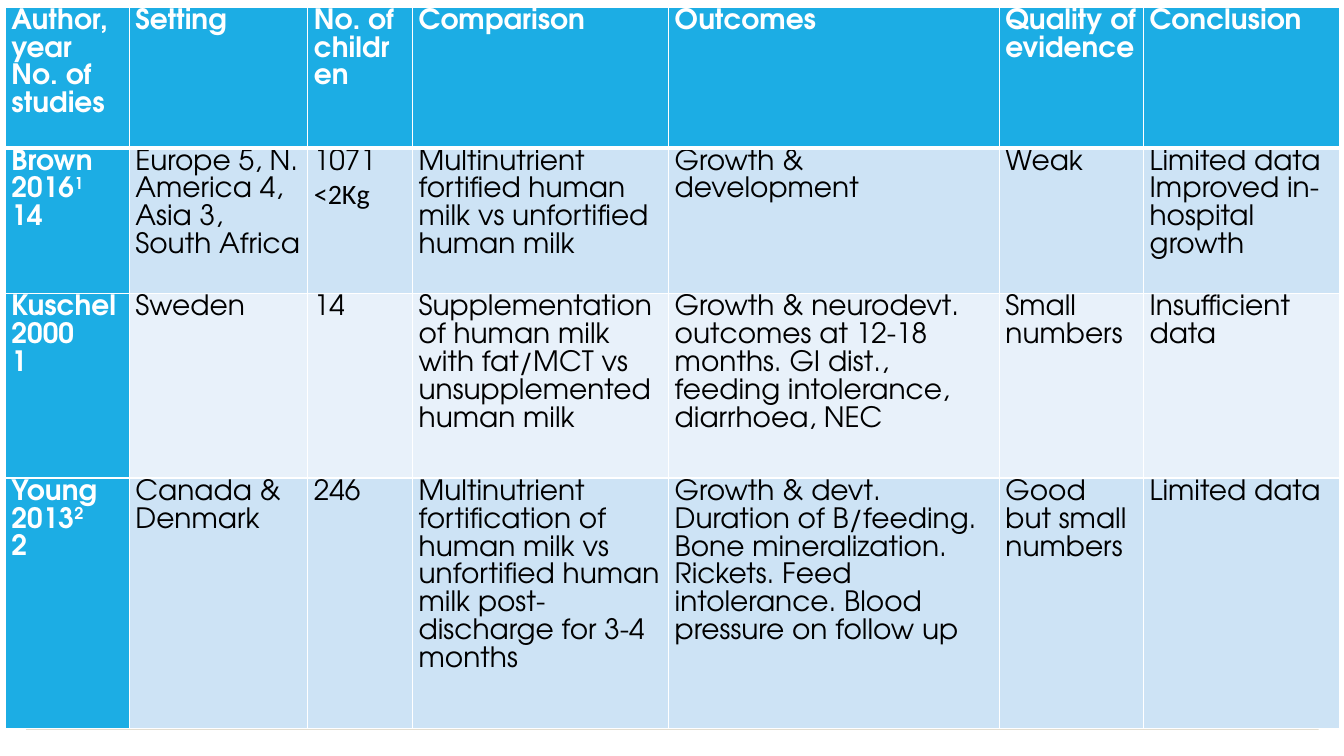
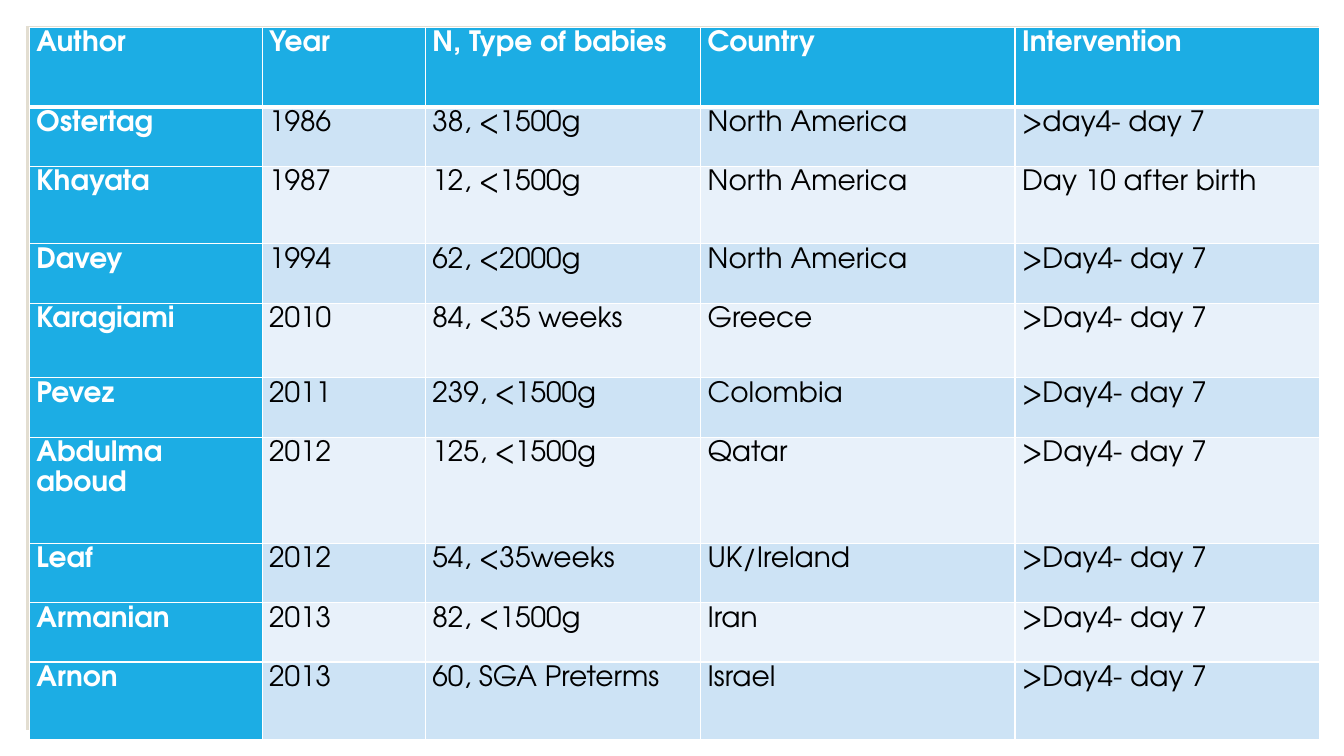
import pptx
import pptx.dml.color
import pptx.enum.shapes
import pptx.oxml
import pptx.oxml.ns
import pptx.util

RGB = pptx.dml.color.RGBColor
BLUE = RGB(0x1C, 0xAD, 0xE4)
BANDS = (RGB(0xCD, 0xE3, 0xF5), RGB(0xE8, 0xF1, 0xFA))
SAND = RGB(0xE3, 0xDE, 0xD1)
WHITE = RGB(0xFF, 0xFF, 0xFF)
BLACK = RGB(0, 0, 0)
FACE = "TeX Gyre Adventor"
SIZE = pptx.util.Pt(20)


class Deck:
    def __init__(self):
        self.show = pptx.Presentation()
        self.show.slide_width = pptx.util.Inches(13.33)
        self.show.slide_height = pptx.util.Inches(7.5)
        self.slide = None

    def box(self, left, top, width, height):
        wide, high = self.show.slide_width, self.show.slide_height
        return [int(share * side / 100) for share, side in
                zip((left, top, width, height), (wide, high, wide, high))]

    def page(self):
        self.slide = self.show.slides.add_slide(self.show.slide_layouts[6])
        panel = self.slide.shapes.add_shape(
            pptx.enum.shapes.MSO_SHAPE.RECTANGLE, *self.box(1.95, 3.47, 96.17, 93.07))
        panel.shadow.inherit = False
        panel.fill.solid()
        panel.fill.fore_color.rgb = SAND
        panel.line.fill.background()

    def edge(self, cell, side, width):
        line = pptx.oxml.parse_xml(
            f'<a:ln{side} {pptx.oxml.ns.nsdecls("a")} w="{pptx.util.Pt(width)}">'
            f'<a:solidFill><a:srgbClr val="{WHITE}"/></a:solidFill></a:ln{side}>')
        cell._tc.get_or_add_tcPr().append(line)

    def label(self, cell, text, head, space):
        frame = cell.text_frame
        frame.text = text
        for para in frame.paragraphs:
            para.line_spacing = space
            font = para.font
            font.name, font.size, font.bold = FACE, SIZE, head
            font.color.rgb = WHITE if head else BLACK
            base, mark, note = para.text.partition("^")
            if mark:
                para.runs[0].text = base
                run = para.add_run()
                run.text = note
                run.font._element.set("baseline", "30000")

    def table(self, area, cols, rows, data, pad, space):
        left, top, width, height = self.box(*area)
        grid = self.slide.shapes.add_table(
            len(rows), len(cols), left, top, width, height).table
        for col, part in zip(grid.columns, cols):
            col.width = int(width * part / sum(cols))
        for row, part in zip(grid.rows, rows):
            row.height = int(height * part / sum(rows))
        for i, line in enumerate(data):
            for j, text in enumerate(line):
                cell = grid.cell(i, j)
                head = i == 0 or j == 0
                cell.margin_left = cell.margin_right = pptx.util.Inches(pad)
                cell.margin_top = cell.margin_bottom = 0
                self.label(cell, text, head, space)
                for side, thick in (("L", 1), ("R", 1),
                                    ("T", 3 if i == 1 else 1),
                                    ("B", 3 if i == 0 else 1)):
                    self.edge(cell, side, thick)
                cell.fill.solid()
                cell.fill.fore_color.rgb = BLUE if head else BANDS[(i - 1) % 2]
        return grid


REVIEWS = [
    ("Author, year\nNo. of studies", "Setting", "No. of children", "Comparison",
     "Outcomes", "Quality of evidence", "Conclusion"),
    ("Brown 2016^1\n14", "Europe 5, N. America 4, Asia 3, South Africa",
     "1071\n<2Kg",
     "Multinutrient fortified human milk vs unfortified human milk",
     "Growth & development", "Weak",
     "Limited data Improved in-hospital growth"),
    ("Kuschel 2000\n1", "Sweden", "14",
     "Supplementation of human milk with fat/MCT vs unsupplemented human milk",
     "Growth & neurodevt. outcomes at 12-18 months. GI dist., "
     "feeding intolerance, diarrhoea, NEC",
     "Small numbers", "Insufficient data"),
    ("Young 2013^2\n2", "Canada & Denmark", "246",
     "Multinutrient fortification of human milk vs unfortified human milk "
     "post-discharge for 3-4 months",
     "Growth & devt. Duration of B/feeding. Bone mineralization. Rickets. "
     "Feed intolerance. Blood pressure on follow up",
     "Good but small numbers", "Limited data"),
]

LATER = ">Day4- day 7"
TRIALS = [
    ("Author", "Year", "N, Type of babies", "Country", "Intervention"),
    ("Ostertag", "1986", "38, <1500g", "North America", ">day4- day 7"),
    ("Khayata", "1987", "12, <1500g", "North America", "Day 10 after birth"),
    ("Davey", "1994", "62, <2000g", "North America", LATER),
    ("Karagiami", "2010", "84, <35 weeks", "Greece", LATER),
    ("Pevez", "2011", "239, <1500g", "Colombia", LATER),
    ("Abdulma aboud", "2012", "125, <1500g", "Qatar", LATER),
    ("Leaf", "2012", "54, <35weeks", "UK/Ireland", LATER),
    ("Armanian", "2013", "82, <1500g", "Iran", LATER),
    ("Arnon", "2013", "60, SGA Preterms", "Israel", LATER),
]


def main():
    deck = Deck()
    deck.page()
    grid = deck.table(
        (0.4, 0.93, 99.25, 95.47),
        (1.23, 1.77, 1.04, 2.54, 3.28, 1.43, 1.94),
        (1.38, 1.43, 1.81, 2.46), REVIEWS, 0.06, 1.07)
    grid.cell(1, 2).text_frame.paragraphs[1].font.name = "Calibri"
    deck.page()
    deck.table(
        (2.18, 3.6, 96, 94.27),
        (2.31, 1.62, 2.73, 3.12, 3.02),
        (0.79, 0.59, 0.77, 0.59, 0.74, 0.59, 1.05, 0.59, 0.59, 0.77),
        TRIALS, 0.07, 1.15)
    deck.show.save("out.pptx")


if __name__ == "__main__":
    main()
